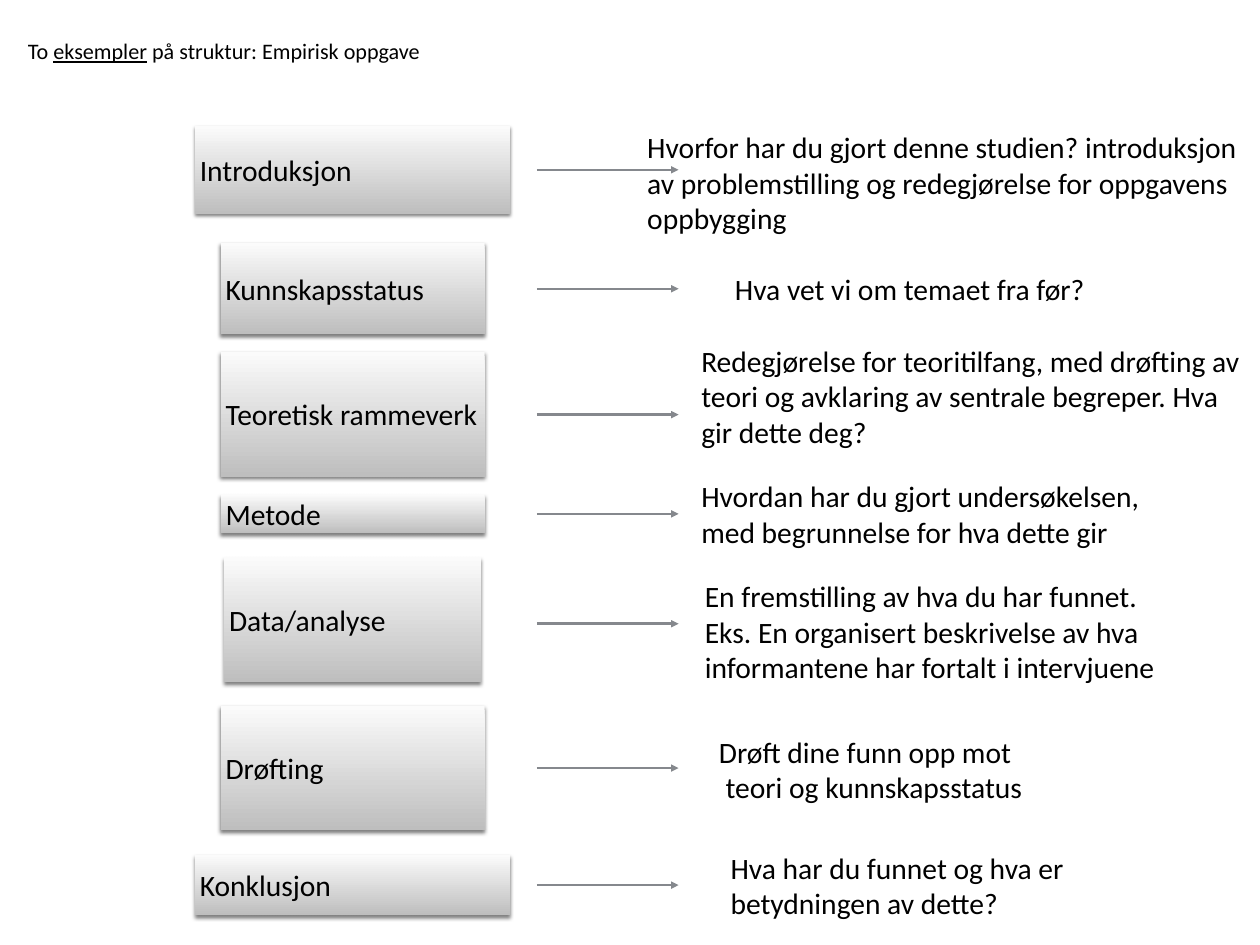
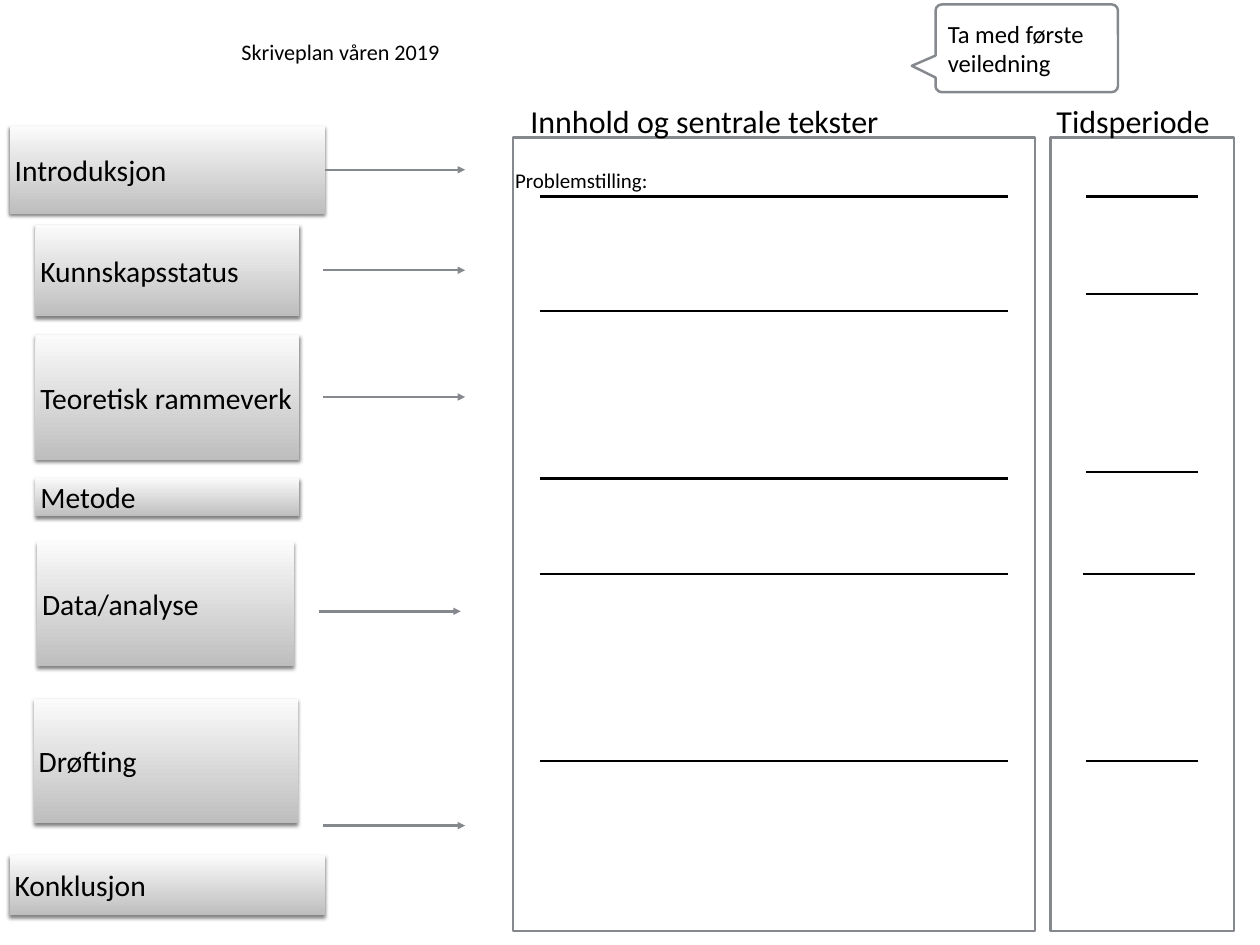
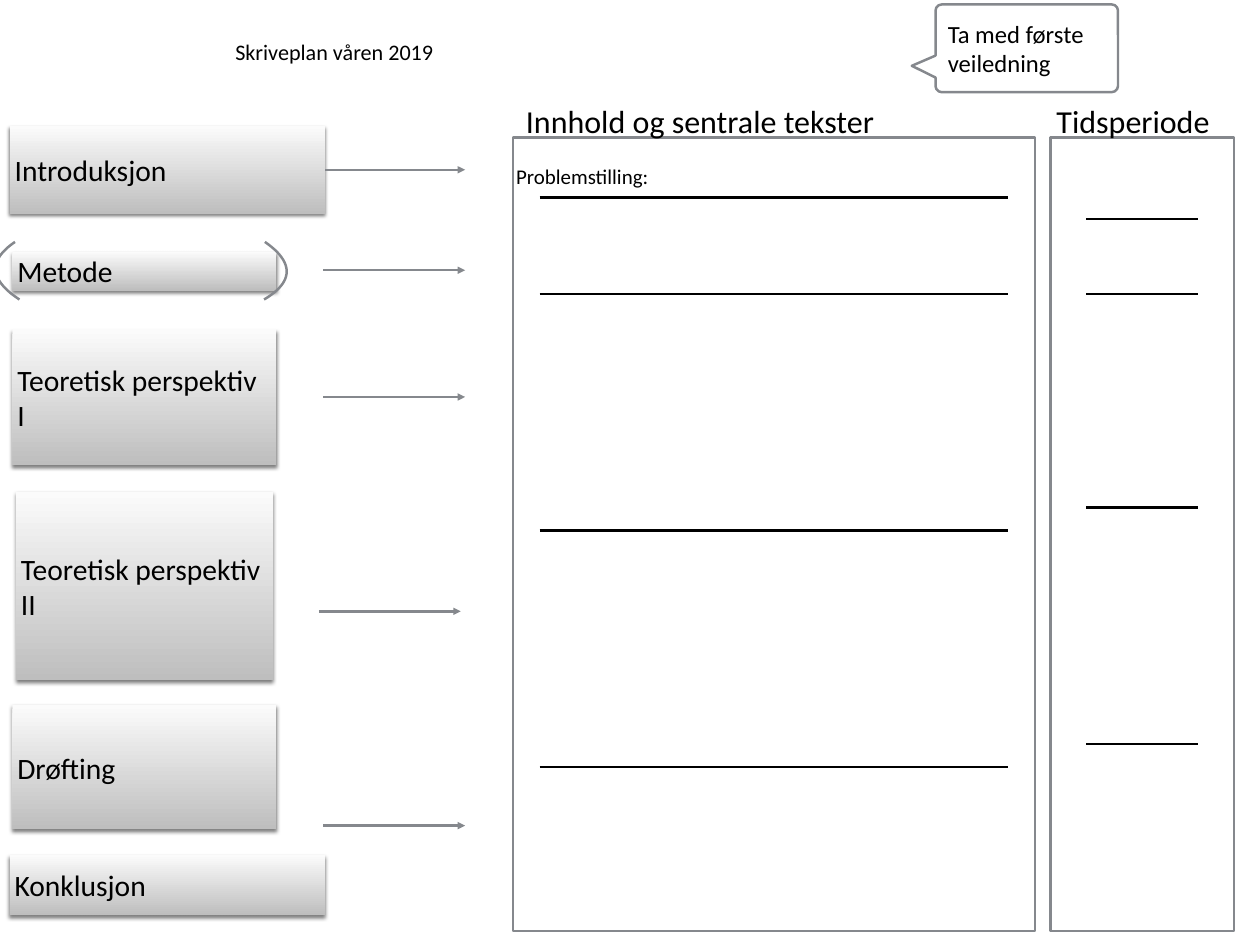
from lxml.etree import SubElement as Sub
from pptx import Presentation
from pptx.dml.color import RGBColor as Rgb
from pptx.enum.shapes import MSO_CONNECTOR as Conn, MSO_SHAPE as Geo
from pptx.enum.text import MSO_ANCHOR as Anchor, PP_ALIGN as Align
from pptx.oxml.ns import qn
from pptx.util import Pt

FONT = "Calibri"
HEX = {"text": "000000", "line": "85888D", "top": "FBFBFB", "base": "BEBEBE"}
PAD = 4
ARROW = 115.2  # arrow length

# Box sizes: wide (first and last step), normal and narrow
WIDE, MID, SLIM = 256.3, 214.6, 208.8
INTRO = ("Introduksjon", 102.3, WIDE, 71.4)
END = ("Konklusjon", 694.8, WIDE, 49)


def color(name):
    return Rgb.from_string(HEX[name])


# Text
def write(shape, lines, size, left=PAD):
    """Fill a shape with lines; a line is a string or (text, underlined) runs."""
    frame = shape.text_frame
    frame.word_wrap = True
    frame.vertical_anchor = Anchor.MIDDLE
    frame.margin_left = Pt(left)
    frame.margin_top = frame.margin_right = frame.margin_bottom = Pt(PAD)
    for i, line in enumerate(lines):
        para = frame.add_paragraph() if i else frame.paragraphs[0]
        para.alignment = Align.LEFT
        para.font.name, para.font.size = FONT, Pt(size)
        para.font.color.rgb = color("text")
        for words, under in [(line, None)] if isinstance(line, str) else line:
            run = para.add_run()
            run.text = words
            run.font.underline = under


def label(slide, x, y, w, h, lines, size=24):
    write(slide.shapes.add_textbox(Pt(x), Pt(y), Pt(w), Pt(h)), lines, size)


# Shapes
def outline(shape):
    shape.shadow.inherit = False
    shape.fill.background()
    shape.line.color.rgb = color("line")
    shape.line.width = Pt(2)


def frame(slide, x, y, w, h, kind=Geo.RECTANGLE):
    shape = slide.shapes.add_shape(kind, Pt(x), Pt(y), Pt(w), Pt(h))
    outline(shape)
    return shape


def shade(shape):
    """Soft shadow straight below the shape."""
    shape.shadow.inherit = False
    effects = shape._element.spPr.find(qn("a:effectLst"))
    outer = Sub(effects, qn("a:outerShdw"), blurRad=str(Pt(3)), dist=str(Pt(2)),
                dir="5400000", rotWithShape="0")
    tint = Sub(outer, qn("a:srgbClr"), val=HEX["text"])
    Sub(tint, qn("a:alpha"), val="50000")


def box(slide, x, name, y, w, h):
    shape = slide.shapes.add_shape(Geo.RECTANGLE, Pt(x), Pt(y), Pt(w), Pt(h))
    shade(shape)
    shape.line.fill.background()
    shape.fill.gradient()
    shape.fill.gradient_angle = 270
    for stop, tone in zip(shape.fill.gradient_stops, ("top", "base")):
        stop.color.rgb = color(tone)
    write(shape, name.split("\n"), 24)
    return shape


def curve(slide, *ends):
    """Open Bézier curve through four control points, drawn in short steps."""
    steps = 24

    def spot(t):
        parts = ((1 - t) ** 3, 3 * t * (1 - t) ** 2, 3 * t * t * (1 - t), t ** 3)
        return tuple(Pt(sum(p * e[k] for p, e in zip(parts, ends))) for k in (0, 1))

    pen = slide.shapes.build_freeform(*spot(0))
    pen.add_line_segments([spot(i / steps) for i in range(1, steps + 1)], close=False)
    outline(pen.convert_to_shape())


# Lines
def rule(slide, x, y, w, tone="text"):
    line = slide.shapes.add_connector(Conn.STRAIGHT, Pt(x), Pt(y), Pt(x + w), Pt(y))
    line.line.color.rgb = color(tone)
    line.line.width = Pt(2)
    Sub(line._element.spPr, qn("a:effectLst"))
    return line


def arrow(slide, x, y):
    line = rule(slide, x, y, ARROW, "line")
    Sub(line.line._get_or_add_ln(), qn("a:tailEnd"), type="triangle")
    return line


# Slides
def outlook(slide):
    """Structure of an empirical paper: steps, arrows and notes."""
    label(slide, 18.7, 15.8, 717, 51,
          [[("To ", None), ("eksempler", True),
            (" på struktur: Empirisk oppgave", None)]], 18)
    for x, step in (
        (158.4, INTRO),
        (179.3, ("Kunnskapsstatus", 197.3, MID, 74.2)),
        (179.3, ("Teoretisk rammeverk", 285.8, MID, 101.5)),
        (179.3, ("Metode", 401.8, MID, 31.7)),
        (182.2, ("Data/analyse", 452.9, SLIM, 101.5)),
        (179.3, ("Drøfting", 573.8, MID, 100.8)),
        (158.4, END),
    ):
        box(slide, x, *step)
    for y in (138, 234.7, 337, 417.6, 506.9, 624.2, 719.3):
        arrow(slide, 436.3, y)
    for x, y, w, h, *lines in (
        (522, 86.4, 496.1, 123.8, "Hvorfor har du gjort denne studien? introduksjon av "
         "problemstilling og redegjørelse for oppgavens oppbygging"),
        (593.3, 216, 316, 36.7, "Hva vet vi om temaet fra før?"),
        (565.9, 274.3, 452.2, 95, "Redegjørelse for teoritilfang, med drøfting av teori "
         "og avklaring av sentrale begreper. Hva gir dette deg?"),
        (565.9, 384.5, 409, 66.2, "Hvordan har du gjort undersøkelsen,",
         "med begrunnelse for hva dette gir"),
        (568.8, 465.8, 422.6, 95, "En fremstilling av hva du har funnet.",
         "Eks. En organisert beskrivelse av hva",
         "informantene har fortalt i intervjuene"),
        (580.3, 591.8, 283.7, 66.2, "Drøft dine funn opp mot",
         " teori og kunnskapsstatus"),
        (589.7, 686.2, 322.6, 66.2, "Hva har du funnet og hva er",
         "betydningen av dette?"),
    ):
        label(slide, x, y, w, h, lines)


def plan(slide, title, head, topic, steps, texts, times):
    """Writing plan: steps at left, ruled columns for texts and periods."""
    label(slide, title, 15.8, 370, 51.8, ["Skriveplan våren 2019"], 18)
    first = box(slide, 7.9, *INTRO)
    box(slide, 7.9, *END)
    for x, step in steps:
        box(slide, x, *step)
    arrow(slide, 262.8, 138).begin_connect(first, 3)
    for x, y in ((262.8, 219.6), (262.8, 322.6), (259.2, 496.8), (262.8, 671)):
        arrow(slide, x, y)

    # Columns
    for x, w in ((416.9, 424.1), (853.9, 149)):
        frame(slide, x, 111.6, w, 645.1)
    label(slide, head, 78.5, 318.2, 38.9, ["Innhold og sentrale tekster"], 26)
    label(slide, 854.6, 78.5, 147.6, 38.9, ["Tidsperiode"], 26)
    label(slide, *topic, 124.6, 28, ["Problemstilling:"], 17)
    for y in texts:
        rule(slide, 438.5, y, 380.9)
    for x, y in times:
        rule(slide, x, y, 91.3)

    # Callout
    call = frame(slide, 760.3, 3.6, 148.3, 71.3, Geo.ROUNDED_RECTANGULAR_CALLOUT)
    for i, value in enumerate((-0.63, 0.2, 0.07)):
        call.adjustments[i] = value
    write(call, ["Ta med første", "veiledning"], 20, left=8.5)


def main():
    deck = Presentation()
    deck.slide_width, deck.slide_height = Pt(1024), Pt(768)
    one, two, three = (deck.slides.add_slide(deck.slide_layouts[6]) for _ in range(3))
    col = 882.7  # left end of the period rules

    outlook(one)
    plan(two, 192.2, 427, (414.7, 132.5),
         ((28.8, ("Kunnskapsstatus", 182.9, MID, 74.2)),
          (28.8, ("Teoretisk rammeverk", 272.2, MID, 101.5)),
          (28.8, ("Metode", 388.1, MID, 31.7)),
          (30.2, ("Data/analyse", 439.9, SLIM, 101.5)),
          (27.4, ("Drøfting", 568.1, MID, 100.8))),
         (159.8, 252.7, 388.8, 466.6, 618.5),
         ((col, 159.8), (col, 239), (col, 383.8), (879.8, 466.6), (col, 618.5)))
    plan(three, 187.2, 423.4, (415.4, 128.9),
         ((10.1, ("Metode", 204.5, MID, 31.7)),
          (10.1, ("Teoretisk perspektiv\nI", 267.8, MID, 110.2)),
          (13, ("Teoretisk perspektiv\nII", 399.6, SLIM, 153.4)),
          (10.1, ("Drøfting", 573.1, MID, 100.8))),
         (160.6, 239, 431.3, 623.5),
         [(col, y) for y in (177.8, 239, 412.6, 604.8)])

    # Brackets around the optional step
    curve(three, (15.8, 243.4), (-8.6, 227.5), (-10.1, 211.7), (12.2, 196.6))
    curve(three, (214.6, 243.4), (239, 229), (239, 213.1), (215.3, 196.6))
    deck.save("out.pptx")


if __name__ == "__main__":
    main()
